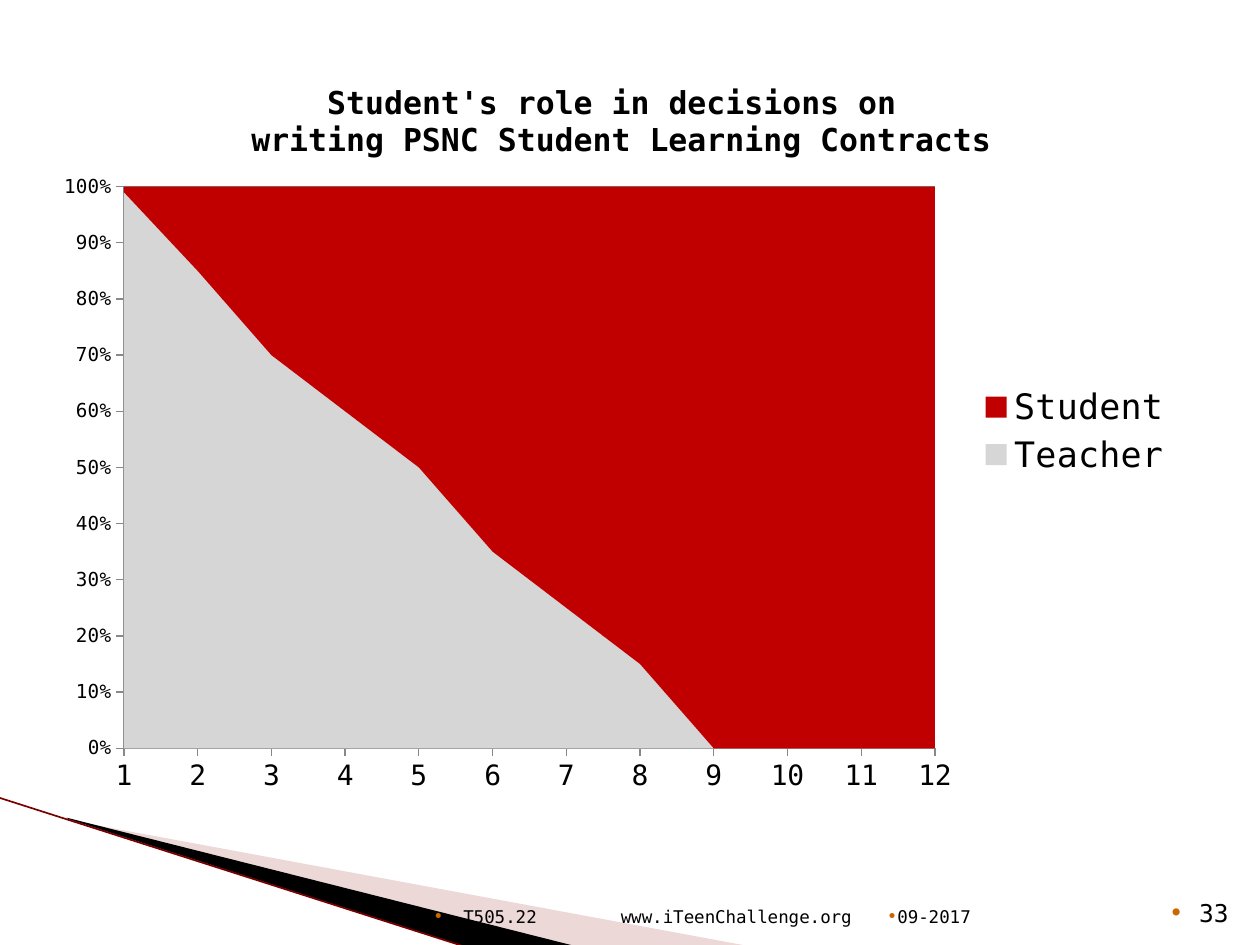
from lxml import etree
from pptx import Presentation
from pptx.chart.data import CategoryChartData
from pptx.dml.color import RGBColor
from pptx.enum.chart import XL_CHART_TYPE, XL_LEGEND_POSITION, XL_TICK_MARK
from pptx.enum.shapes import MSO_CONNECTOR
from pptx.enum.text import MSO_ANCHOR, PP_ALIGN
from pptx.oxml import parse_xml
from pptx.oxml.ns import nsdecls, qn
from pptx.util import Inches, Pt

FONT = "DejaVu Sans Mono"
BLACK = RGBColor(0x00, 0x00, 0x00)
ROSE = RGBColor(0xD2, 0x9E, 0x9E)
DARK_RED = RGBColor(0x7A, 0x00, 0x00)
RED = RGBColor(0xC0, 0x00, 0x00)
SILVER = RGBColor(0xD6, 0xD6, 0xD6)
AXIS_GRAY = RGBColor(0x88, 0x88, 0x88)
BULLET_ORANGE = RGBColor(0xCC, 0x66, 0x00)

TEACHER_SHARE = (99, 85, 70, 60, 50, 35, 25, 15, 0, 0, 0, 0)
TITLE_LINES = ("Student's role in decisions on ",
               "writing PSNC Student Learning Contracts")


def style_font(font, size, bold=False):
    font.name, font.size, font.bold = FONT, Pt(size), bold
    font.color.rgb = BLACK


def add_wedge(slide, points, color, opacity=None):
    start, *rest = [(Inches(x), Inches(y)) for x, y in points]
    builder = slide.shapes.build_freeform(*start)
    builder.add_line_segments(rest, close=True)
    shape = builder.convert_to_shape()
    shape.shadow.inherit = False
    shape.fill.solid()
    shape.fill.fore_color.rgb = color
    shape.line.fill.background()
    if opacity is not None:
        color_element = shape._element.spPr.find(".//" + qn("a:srgbClr"))
        etree.SubElement(color_element, qn("a:alpha"), val=str(opacity * 1000))


def add_edge_line(slide, start, end):
    x1, y1, x2, y2 = map(Inches, (*start, *end))
    line = slide.shapes.add_connector(MSO_CONNECTOR.STRAIGHT, x1, y1, x2, y2)
    line.line.color.rgb = DARK_RED
    line.line.width = Pt(0.95)
    etree.SubElement(line._element.spPr, qn("a:effectLst"))


def add_bullet(paragraph, hang):
    properties = paragraph._p.get_or_add_pPr()
    properties.set("marL", str(Inches(hang)))
    properties.set("indent", str(-Inches(hang)))
    color = etree.SubElement(properties, qn("a:buClr"))
    etree.SubElement(color, qn("a:srgbClr"), val=str(BULLET_ORANGE))
    etree.SubElement(properties, qn("a:buFont"), typeface=FONT)
    etree.SubElement(properties, qn("a:buChar"), char="•")


def add_text(slide, parts, left, width, size=10, align=PP_ALIGN.LEFT,
             hang=0.0, gap=0):
    """Footer text; gap is the extra width, in points, of a blank part."""
    box = slide.shapes.add_textbox(Inches(left), Inches(7.01),
                                   Inches(width), Inches(0.4))
    frame = box.text_frame
    frame.word_wrap = True
    frame.vertical_anchor = MSO_ANCHOR.BOTTOM
    paragraph = frame.paragraphs[0]
    paragraph.alignment = align
    add_bullet(paragraph, hang)
    for part in parts:
        run = paragraph.add_run()
        run.text = part
        style_font(run.font, size)
        if part == " ":
            run._r.get_or_add_rPr().set("spc", str(gap * 100))


def manual_layout(target="", **fractions):
    inner = f'<c:layoutTarget val="{target}"/>' if target else ""
    inner += "".join(f'<c:{key}Mode val="edge"/>' for key in ("x", "y"))
    inner += "".join(f'<c:{key} val="{value}"/>'
                     for key, value in fractions.items())
    return parse_xml(f'<c:layout {nsdecls("c")}><c:manualLayout>{inner}'
                     "</c:manualLayout></c:layout>")


def replace_layout(parent, layout, index):
    for old in parent.findall(qn("c:layout")):
        parent.remove(old)
    parent.insert(index, layout)


def style_axis(axis, size):
    axis.major_tick_mark = XL_TICK_MARK.OUTSIDE
    axis.minor_tick_mark = XL_TICK_MARK.NONE
    axis.format.line.color.rgb = AXIS_GRAY
    axis.format.line.width = Pt(0.75)
    style_font(axis.tick_labels.font, size)


def add_title(chart):
    frame = chart.chart_title.text_frame
    for index, text in enumerate(TITLE_LINES):
        paragraph = frame.add_paragraph() if index else frame.paragraphs[0]
        run = paragraph.add_run()
        run.text = text
        style_font(run.font, 18, bold=True)
    chart.chart_title.include_in_layout = False
    replace_layout(chart.chart_title._element,
                   manual_layout(x=0.18, y=0.035), 1)


def add_role_chart(slide):
    data = CategoryChartData(number_format="General")
    data.categories = [str(n) for n in range(1, len(TEACHER_SHARE) + 1)]
    data.add_series("Teacher", TEACHER_SHARE)
    data.add_series("Student", [100 - share for share in TEACHER_SHARE])
    chart = slide.shapes.add_chart(
        XL_CHART_TYPE.AREA_STACKED_100, Inches(0.33), Inches(0.42),
        Inches(9.08), Inches(6), data).chart
    style_font(chart.font, 10)
    add_title(chart)

    plot = chart.plots[0]
    plot.vary_by_categories = False
    for series, color in zip(plot.series, (SILVER, RED)):
        series.format.fill.solid()
        series.format.fill.fore_color.rgb = color

    style_axis(chart.category_axis, 16)
    value_axis = chart.value_axis
    style_axis(value_axis, 11)
    value_axis.minimum_scale, value_axis.maximum_scale = 0, 1
    value_axis.major_unit = 0.1
    value_axis.tick_labels.number_format = "0%"
    value_axis.tick_labels.number_format_is_linked = False
    value_axis.has_major_gridlines = True
    value_axis.major_gridlines.format.line.color.rgb = AXIS_GRAY
    value_axis._element.find(qn("c:crossBetween")).set("val", "midCat")

    chart.has_legend = True
    chart.legend.position = XL_LEGEND_POSITION.RIGHT
    chart.legend.include_in_layout = False
    style_font(chart.legend.font, 20)
    plot_area = chart._chartSpace.chart.plotArea
    replace_layout(plot_area, manual_layout(
        "inner", x=0.072, y=0.177, w=0.709, h=0.743), 0)


def main():
    presentation = Presentation()
    presentation.slide_width = Inches(10)
    presentation.slide_height = Inches(7.5)
    slide = presentation.slides.add_slide(presentation.slide_layouts[6])

    add_wedge(slide, [(0.55, 6.51), (5.95, 7.51), (4.56, 7.51), (0.55, 6.5)],
              ROSE, opacity=40)
    add_wedge(slide, [(0.53, 6.49), (4.57, 7.51), (3.72, 7.52), (0.54, 6.5)],
              BLACK)
    add_edge_line(slide, (-0.01, 6.33), (3.71, 7.52))

    add_text(slide, ["09-2017"], 6.94, 2.1)
    add_text(slide, ["T505.22", " ", "www.iTeenChallenge.org "], 2.75, 4.19,
             align=PP_ALIGN.RIGHT, hang=0.24, gap=42)
    add_text(slide, ["33"], 9.08, 0.77, size=14,
             align=PP_ALIGN.RIGHT, hang=0.24)
    add_role_chart(slide)
    presentation.save("out.pptx")


if __name__ == "__main__":
    main()
